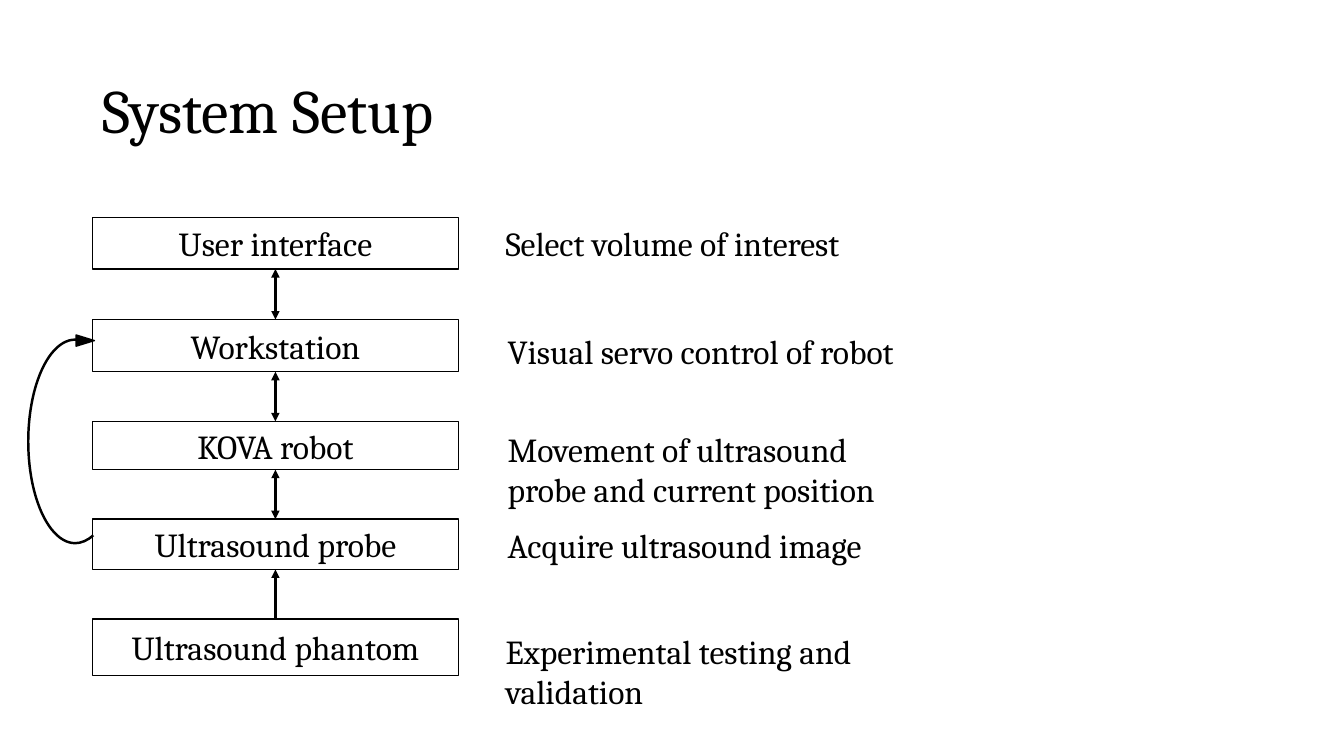
from collections import namedtuple

from lxml import etree
from pptx import Presentation
from pptx import util as u
from pptx.dml.color import RGBColor
from pptx.enum import shapes, text
from pptx.oxml import ns

BLACK = RGBColor(0x00, 0x00, 0x00)
FONT = "Cambria"

Box = namedtuple("Box", "left top width height")
Stage = namedtuple("Stage", "name top height note note_left note_top")

STAGES = [
    Stage("User interface", 0, 36.7, "Select volume of interest", 288, 0),
    Stage("Workstation", 72.7, 37.4, "Visual servo control of robot", 289.5, 77),
    Stage("KOVA robot", 145.5, 34.5, "Movement of ultrasound probe and current position", 289.5, 147),
    Stage("Ultrasound probe", 215.3, 36, "Acquire ultrasound image", 289.5, 216),
    Stage("Ultrasound phantom", 286.6, 40.3, "Experimental testing and validation", 288, 291.6),
]


def points(*values):
    """Convert numbers to lengths in points."""
    return [u.Pt(value) for value in values]


def write(shape, content, size=24, align=text.PP_ALIGN.LEFT,
          anchor=text.MSO_ANCHOR.MIDDLE, wrap=True, spacing=None):
    """Write one formatted paragraph into a shape."""
    frame = shape.text_frame
    frame.word_wrap = wrap
    frame.vertical_anchor = anchor
    para = frame.paragraphs[0]
    para.alignment = align
    para.line_spacing = spacing
    span = para.add_run()
    span.text = content
    span.font.size = u.Pt(size)
    span.font.name = FONT
    span.font.color.rgb = BLACK


def add_outline(page, kind, box, weight=1, fill=None):
    """Add a black-lined preset shape without a shadow."""
    shape = page.shapes.add_shape(kind, *points(*box))
    shape.shadow.inherit = False
    shape.line.color.rgb = BLACK
    shape.line.width = u.Pt(weight)
    if fill is None:
        shape.fill.background()
    else:
        shape.fill.solid()
        shape.fill.fore_color.rgb = fill
    return shape


def add_arrow(page, x, top, bottom, ends):
    """Add a vertical connector with triangles at the named ends."""
    arrow = page.shapes.add_connector(
        shapes.MSO_CONNECTOR.STRAIGHT, *points(x, top, x, bottom))
    arrow.line.color.rgb = BLACK
    arrow.line.width = u.Pt(2)
    for end in ends:
        etree.SubElement(arrow.line._get_or_add_ln(), ns.qn(f"a:{end}"), type="triangle")
    etree.SubElement(arrow._element.spPr, ns.qn("a:effectLst"))


def add_title(page, box):
    """Place the slide title."""
    title = page.shapes.title
    title.left, title.top, title.width, title.height = points(*box)
    write(title, "System Setup", size=44, spacing=0.9)


def add_stages(page, box):
    """Stack the stage boxes and join neighbours with arrows."""
    for stage in STAGES:
        frame = Box(box.left, box.top + stage.top, box.width, stage.height)
        shape = add_outline(page, shapes.MSO_SHAPE.RECTANGLE, frame)
        write(shape, stage.name, align=text.PP_ALIGN.CENTER)
    for upper, lower in zip(STAGES, STAGES[1:]):
        ends = ["headEnd"] if lower is STAGES[-1] else ["headEnd", "tailEnd"]
        add_arrow(page, box.left + box.width / 2,
                  box.top + upper.top + upper.height, box.top + lower.top, ends)


def add_notes_column(page, box):
    """Describe each stage to the right of its box."""
    for stage in STAGES:
        label = page.shapes.add_textbox(
            *points(box.left + stage.note_left, box.top + stage.note_top, 300, 36))
        write(label, stage.note, anchor=text.MSO_ANCHOR.TOP, wrap=False)


def add_feedback(page, box):
    """Draw the curved return path from the probe to the workstation."""
    curve = add_outline(page, shapes.MSO_SHAPE.ARC, box, weight=1.75)
    curve.adjustments[0] = 161.73
    curve.adjustments[1] = 60.54
    curve._element.spPr.find(ns.qn("a:xfrm")).set("flipH", "1")
    tip = Box(box.left + 36.7, box.top - 5.8, 8, 13)
    head = add_outline(page, shapes.MSO_SHAPE.ISOSCELES_TRIANGLE, tip, fill=BLACK)
    head.rotation = 90


def main():
    """Build the system setup slide."""
    deck = Presentation()
    deck.slide_width, deck.slide_height = points(960, 540)
    page = deck.slides.add_slide(deck.slide_layouts[5])
    diagram = Box(66, 155.5, 261.5, 327)
    add_title(page, Box(66, 28.8, 828, 104.4))
    add_stages(page, diagram)
    add_notes_column(page, diagram)
    add_feedback(page, Box(20.2, 242.6, 67, 145.4))
    deck.save("out.pptx")


if __name__ == "__main__":
    main()
